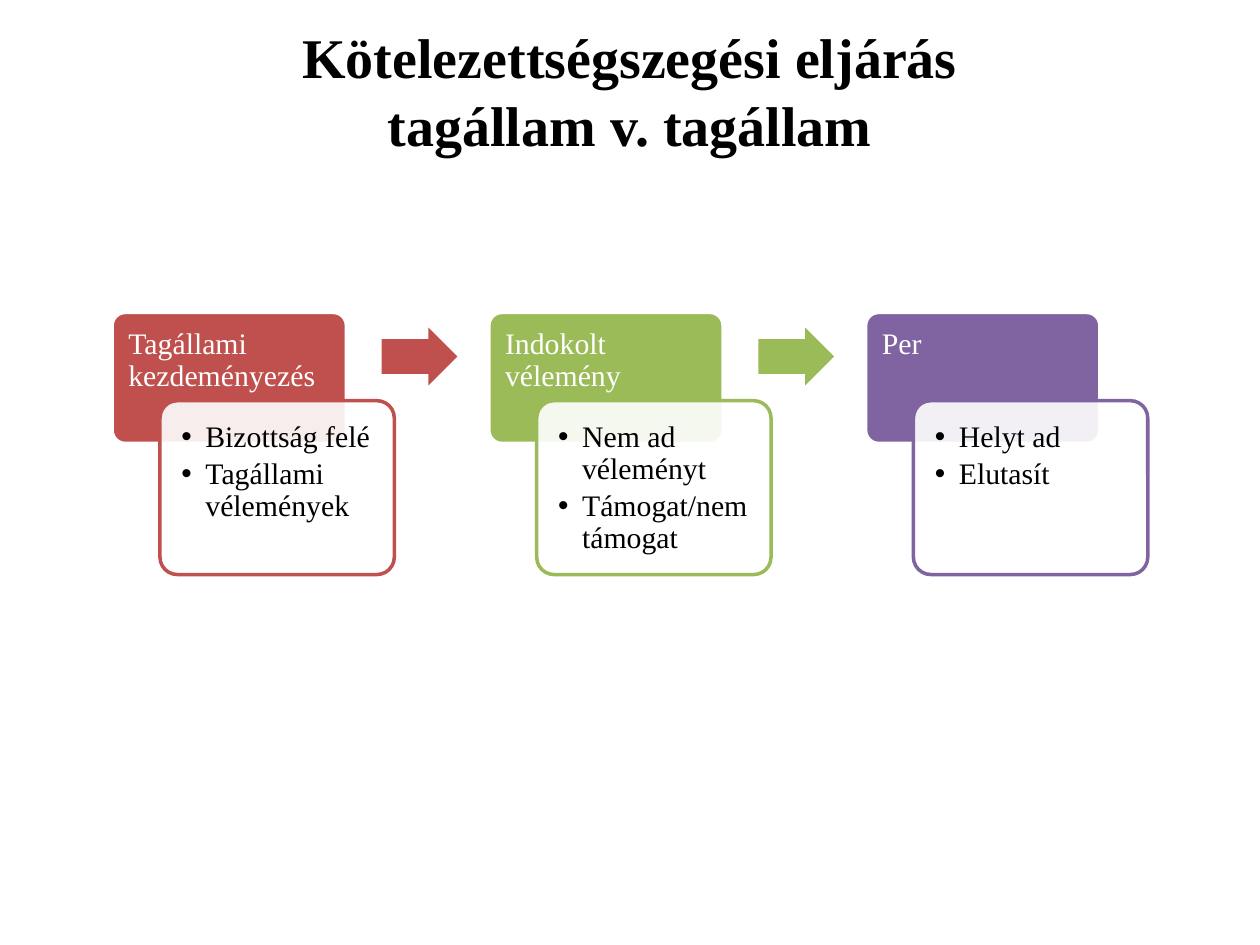
from lxml import etree
from pptx import Presentation
from pptx.dml.color import RGBColor
from pptx.enum.shapes import MSO_SHAPE as Shape
from pptx.enum.text import MSO_ANCHOR as Anchor, PP_ALIGN as Align
from pptx.oxml.ns import qn
from pptx.util import Inches, Pt

FONT = "Times New Roman"
WHITE, BLACK = "FFFFFF", "000000"
STAGES = [
    ("Tagállami kezdeményezés", ["Bizottság felé", "Tagállami vélemények"], "C0504D"),
    ("Indokolt vélemény", ["Nem ad véleményt", "Támogat/nem támogat"], "9BBB59"),
    ("Per", ["Helyt ad", "Elutasít"], "8064A2"),
]
STAGE_PITCH = 2.99


def color(value):
    return RGBColor.from_string(value)


def add_bullet(paragraph, indent):
    properties = paragraph._p.get_or_add_pPr()
    properties.set("marL", str(Inches(indent)))
    properties.set("indent", str(-Inches(indent)))
    etree.SubElement(properties, qn("a:buFont"), typeface="Arial")
    etree.SubElement(properties, qn("a:buChar"), char="•")


def write_text(frame, lines, *, size, fill, bold=False, align=Align.LEFT,
               anchor=Anchor.TOP, inset=None, bullets=False, line_spacing=None, gap=0):
    frame.word_wrap = True
    frame.vertical_anchor = anchor
    if inset is not None:
        frame.margin_left = frame.margin_right = Inches(inset)
        frame.margin_top = frame.margin_bottom = Inches(inset)
    for index, line in enumerate(lines):
        paragraph = frame.add_paragraph() if index else frame.paragraphs[0]
        paragraph.text = line
        if bullets:
            add_bullet(paragraph, 0.19)
        paragraph.alignment = align
        paragraph.line_spacing = line_spacing
        paragraph.space_before = Pt(0)
        paragraph.space_after = Pt(gap)
        for run in paragraph.runs:
            run.font.name = FONT
            run.font.size = Pt(size)
            run.font.bold = bold
            run.font.color.rgb = color(fill)


def add_box(slide, kind, box, fill, *, line=None, adjustments=(), opacity=None):
    shape = slide.shapes.add_shape(kind, *map(Inches, box))
    shape.shadow.inherit = False
    for index, value in enumerate(adjustments):
        shape.adjustments[index] = value
    shape.fill.solid()
    shape.fill.fore_color.rgb = color(fill)
    if opacity is not None:
        fill_color = shape._element.spPr.find(qn("a:solidFill"))[0]
        etree.SubElement(fill_color, qn("a:alpha"), val=str(opacity * 1000))
    if line:
        shape.line.color.rgb = color(line)
        shape.line.width = Pt(2)
    else:
        shape.line.fill.background()
    return shape


def add_title(slide, box):
    title = slide.shapes.title
    title.left, title.top, title.width, title.height = map(Inches, box)
    write_text(title.text_frame, ["Kötelezettségszegési eljárás\vtagállam v. tagállam"],
               size=32, fill=BLACK, bold=True, align=Align.CENTER, anchor=Anchor.MIDDLE)


def add_stage(slide, left, top, heading, points, accent, has_next):
    # Heading card
    card = add_box(slide, Shape.ROUNDED_RECTANGLE, (left, top, 1.86, 1.04), accent,
                   line=WHITE, adjustments=[0.1])
    write_text(card.text_frame, [heading], size=17, fill=WHITE, inset=0.1, line_spacing=0.9)

    # Overlapping card with the details
    details = add_box(slide, Shape.ROUNDED_RECTANGLE, (left + 0.38, top + 0.7, 1.86, 1.38),
                      WHITE, line=accent, adjustments=[0.1], opacity=90)
    write_text(details.text_frame, points, size=17, fill=BLACK, inset=0.13,
               bullets=True, line_spacing=0.9, gap=2.5)

    # Arrow to the next stage
    if has_next:
        add_box(slide, Shape.RIGHT_ARROW, (left + 2.14, top + 0.12, 0.6, 0.46), accent,
                adjustments=[0.6, 0.5])


def add_process(slide, left, top):
    for index, (heading, points, accent) in enumerate(STAGES):
        add_stage(slide, left + index * STAGE_PITCH, top, heading, points, accent,
                  has_next=index < len(STAGES) - 1)


def main():
    presentation = Presentation()
    presentation.slide_width, presentation.slide_height = Inches(10), Inches(7.5)
    slide = presentation.slides.add_slide(presentation.slide_layouts[5])
    add_title(slide, (0.5, 0.13, 9, 1.17))
    add_process(slide, 0.89, 2.48)
    presentation.save("out.pptx")


if __name__ == "__main__":
    main()
